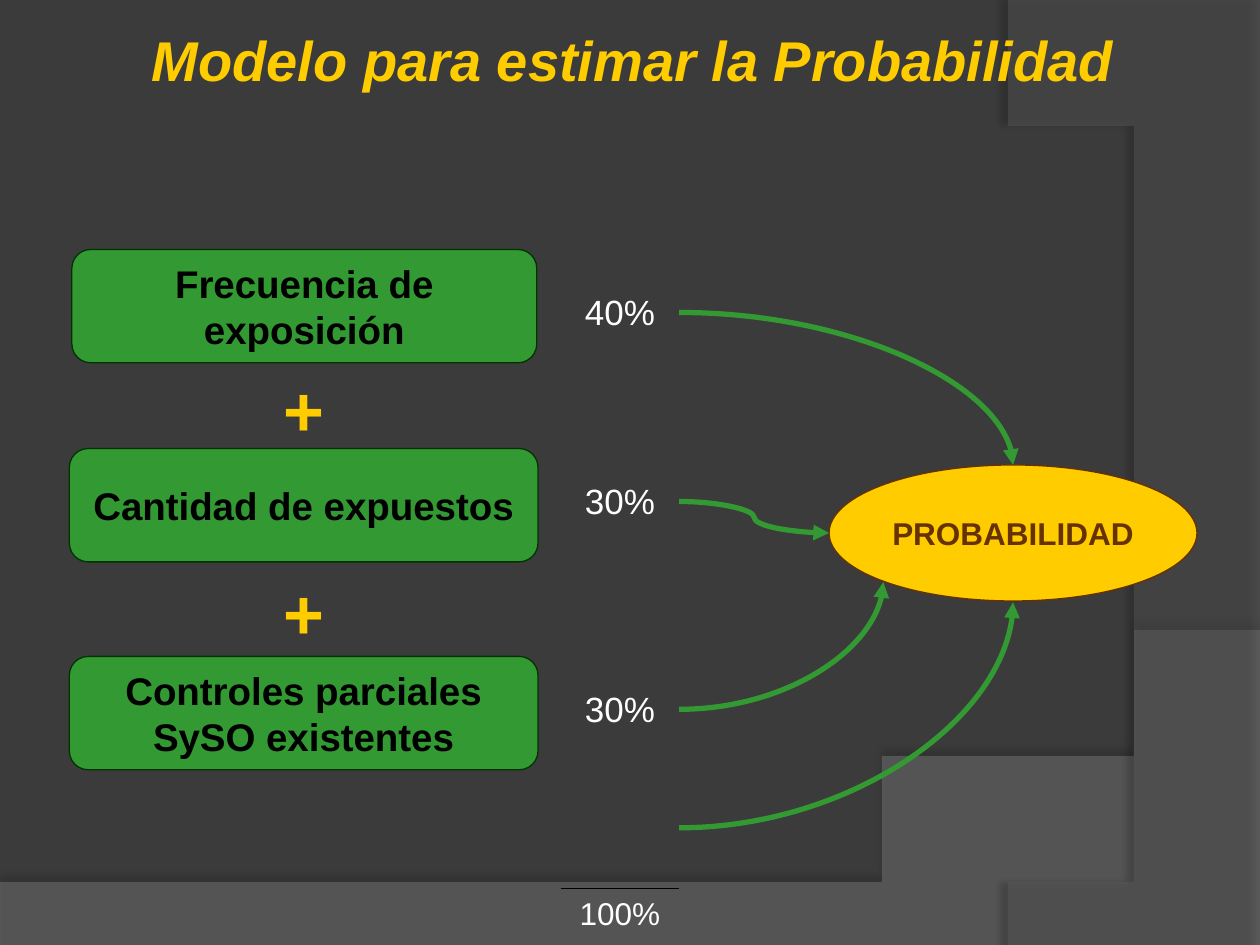
from lxml.etree import SubElement
from pptx import Presentation
from pptx.dml.color import RGBColor
from pptx.enum.shapes import MSO_CONNECTOR as Link, MSO_SHAPE as Shape
from pptx.enum.text import MSO_ANCHOR as Anchor, PP_ALIGN as Align
from pptx.oxml.ns import qn
from pptx.util import Inches, Pt

GREEN, YELLOW, BROWN = "339933", "FFCC00", "663300"
BLACK, WHITE = "000000", "FFFFFF"
FACTORS = [
    ("Frecuencia de exposición", "40%", (0.57, 1.98, 3.69, 0.9), 2.26),
    ("Cantidad de expuestos", "30%", (0.55, 3.56, 3.72, 0.9), 3.76),
    ("Controles parciales SySO existentes", "30%", (0.55, 5.21, 3.72, 0.9), 5.41),
]
ARROWS = [
    (2.48, (8.04, 3.69), "curvedConnector2"),
    (3.98, (6.58, 4.23), "curvedConnector3"),
    (5.63, (7.01, 4.62), "curvedConnector2"),
    (6.57, (8.04, 4.78), "curvedConnector2"),
]


def paint(color_format, color):
    """Set a colour from a hex string."""
    color_format.rgb = RGBColor.from_string(color)


def fill_solid(fill, color):
    """Give a fill one solid colour."""
    fill.solid()
    paint(fill.fore_color, color)


def add_child(parent, tag, **values):
    """Append an XML element with the given attributes."""
    child = SubElement(parent, qn(tag))
    for name, value in values.items():
        child.set(name, str(value))
    return child


def write(shape, text, size, color, side=0.1, spacing=None, **font_values):
    """Put one centred, wrapped paragraph into a shape."""
    frame = shape.text_frame
    frame_values = {"word_wrap": True, "margin_left": Inches(side), "margin_right": Inches(side)}
    for name, value in frame_values.items():
        setattr(frame, name, value)
    para = frame.paragraphs[0]
    para.alignment = Align.CENTER
    para.line_spacing = spacing
    span = para.add_run()
    span.text = text
    for name, value in {"name": "Arial", "size": Pt(size), **font_values}.items():
        setattr(span.font, name, value)
    paint(span.font.color, color)


def add_label(page, area, text, size, color, **values):
    """Add a text box."""
    box = page.shapes.add_textbox(*map(Inches, area))
    write(box, text, size, color, **values)


def add_node(page, kind, area, colors, text, size, side=0.1):
    """Add a filled, outlined shape with bold text."""
    fill, line, ink = colors
    node = page.shapes.add_shape(kind, *map(Inches, area))
    node.shadow.inherit = False
    fill_solid(node.fill, fill)
    paint(node.line.color, line)
    node.line.width = Pt(0.75)
    node.text_frame.vertical_anchor = Anchor.MIDDLE
    write(node, text, size, ink, side=side, bold=True)


def add_line(page, start, end, color, width, curve=None):
    """Add a straight line, or a curved arrow when a curve is named."""
    kind = Link.CURVE if curve else Link.STRAIGHT
    line = page.shapes.add_connector(kind, *map(Inches, (*start, *end)))
    paint(line.line.color, color)
    line.line.width = Pt(width)
    properties = line._element.spPr
    if curve:
        properties.find(qn("a:prstGeom")).set("prst", curve)
        add_child(line.line._get_or_add_ln(), "a:tailEnd", type="triangle")
    add_child(properties, "a:effectLst")


def bezier(start, first, second, end, steps=48):
    """Return points along a cubic curve, without its start."""
    points = []
    for step in range(1, steps + 1):
        t = step / steps
        weights = ((1 - t) ** 3, 3 * t * (1 - t) ** 2, 3 * t * t * (1 - t), t ** 3)
        points.append(tuple(
            sum(weight * value for weight, value in zip(weights, axis))
            for axis in zip(start, first, second, end)
        ))
    return points


def add_swoosh(page, points, color, opacity, shade, distance, angle):
    """Add a translucent background outline with a soft shadow."""
    builder = page.shapes.build_freeform(*points[0], scale=Inches(1))
    builder.add_line_segments(points[1:], close=True)
    swoosh = builder.convert_to_shape()
    swoosh.shadow.inherit = False
    fill_solid(swoosh.fill, color)
    swoosh.line.fill.background()
    properties = swoosh._element.spPr
    tint = properties.find(qn("a:solidFill")).find(qn("a:srgbClr"))
    add_child(tint, "a:alpha", val=opacity * 1000)
    shadow = add_child(properties.find(qn("a:effectLst")), "a:outerShdw", blurRad=Pt(4),
                       dist=Pt(distance), dir=angle * 60000, algn="ctr", rotWithShape=0)
    add_child(add_child(shadow, "a:srgbClr", val=BLACK), "a:alpha", val=shade * 1000)


def add_background(page):
    """Paint the dark background and its two swooshes."""
    fill_solid(page.background.fill, "3B3B3B")
    wave = bezier((10, 5.2), (5.59, 7.29), (3.91, 7.19), (0, 7.05))
    add_swoosh(page, [(0, 7.05), (0, 7.51), (10, 7.51), (10, 5.2), *wave],
               "7F7F7F", 45, 35, 3.5, 270)
    arc = bezier((8.21, 7.5), (9.35, 6.19), (10.18, 3), (8, 0))
    add_swoosh(page, [(10, 0.02), (10, 7.5), (8.21, 7.5), *arc],
               "5E5E5E", 40, 45, 4, 180)


def main():
    """Build the probability model slide."""
    deck = Presentation()
    deck.slide_width, deck.slide_height = Inches(10), Inches(7.5)
    page = deck.slides.add_slide(deck.slide_layouts[6])
    add_background(page)
    add_label(page, (0.4, 0.21, 9.25, 0.59), "Modelo para estimar la Probabilidad",
              32, YELLOW, spacing=0.9, bold=True, italic=True)
    add_node(page, Shape.OVAL, (6.58, 3.69, 2.92, 1.08), (YELLOW, BROWN, BROWN),
             "PROBABILIDAD", 18, side=0)
    for name, share, area, top in FACTORS:
        add_node(page, Shape.FLOWCHART_ALTERNATE_PROCESS, area,
                 (GREEN, "003300", BLACK), name, 22)
        add_label(page, (4.45, top, 0.94, 0.43), share, 20, WHITE)
    for top in (2.86, 4.47):
        add_label(page, (2, top, 0.83, 0.77), "+", 40, YELLOW, bold=True)
    for top, end, curve in ARROWS:
        add_line(page, (5.39, top), end, GREEN, 3, curve)
    add_label(page, (4.45, 7.05, 0.94, 0.4), "100%", 18, WHITE)
    add_line(page, (4.45, 7.05), (5.39, 7.05), BLACK, 0.75)
    deck.save("out.pptx")


if __name__ == "__main__":
    main()
